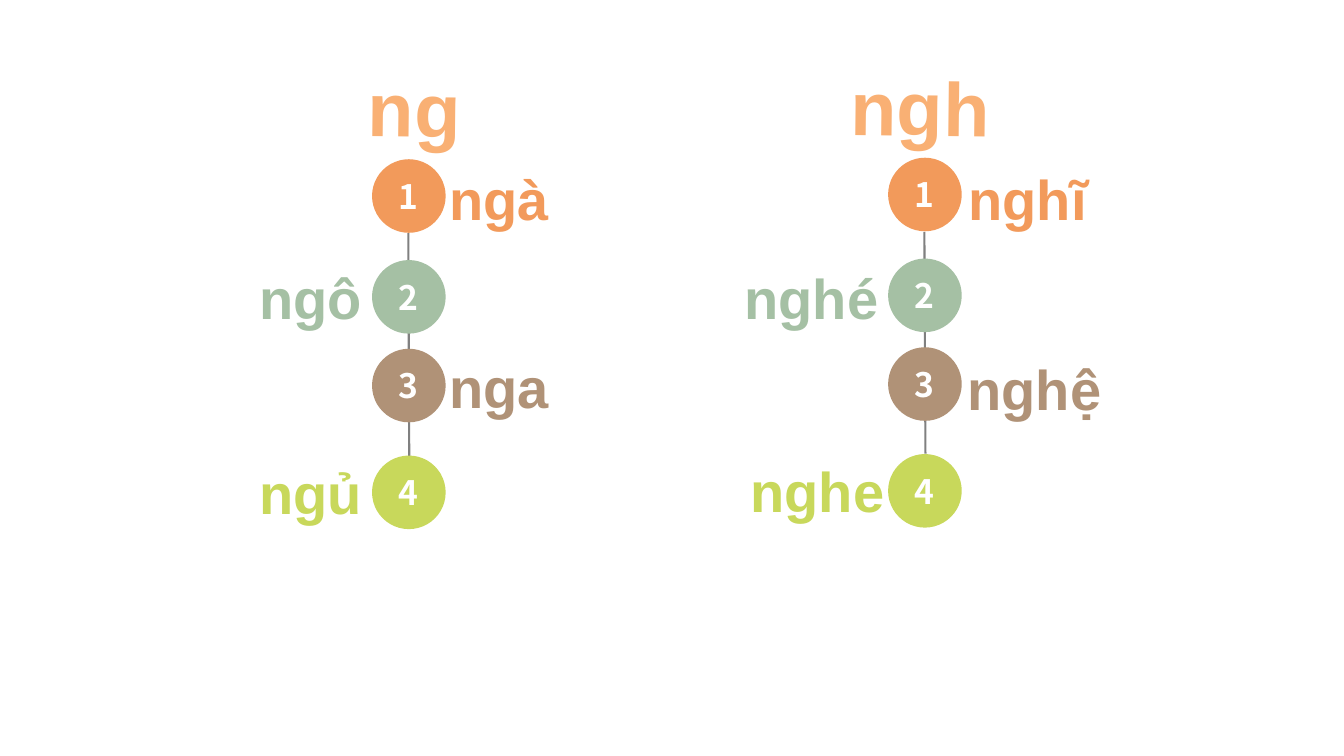
import pptx
import pptx.util
import pptx.dml.color
import pptx.enum.shapes
import pptx.enum.text
import pptx.oxml.ns
import lxml.etree

COLORS = {"title": "F9B074", "line": "808080", "white": "FFFFFF",
          "orange": "F29A5B", "sage": "A5C0A4", "brown": "B09277", "lime": "C8D85B"}
ALIGN = pptx.enum.text.PP_ALIGN
ANCHOR = pptx.enum.text.MSO_ANCHOR


def rgb(name):
    return pptx.dml.color.RGBColor.from_string(COLORS[name])


def write(tf, text, size=40, color="white", font="Arial", align=ALIGN.LEFT,
          anchor=ANCHOR.TOP, wrap=True):
    tf.word_wrap = wrap
    tf.vertical_anchor = anchor
    p = tf.paragraphs[0]
    p.alignment = align
    r = p.add_run()
    r.text = text
    r.font.size = pptx.util.Pt(size)
    r.font.bold = True
    r.font.name = font
    r.font.color.rgb = rgb(color)
    # East Asian typeface, so that every script uses the same font
    ea = lxml.etree.SubElement(r.font._element, pptx.oxml.ns.qn("a:ea"))
    ea.set("typeface", font)


class Deck:
    """Positions and sizes are percentages of the slide's width and height."""
    circle_w, circle_h, word_h, title_h = 5.48, 9.73, 10.27, 3.07

    def __init__(self):
        self.prs = pptx.Presentation()
        self.prs.slide_width = pptx.util.Inches(13.33)
        self.prs.slide_height = pptx.util.Inches(7.5)
        self.s = self.prs.slides.add_slide(self.prs.slide_layouts[6])

    def x(self, share):
        return round(self.prs.slide_width * share / 100)

    def y(self, share):
        return round(self.prs.slide_height * share / 100)

    def box(self, x, y, w, h):
        return self.x(x), self.y(y), self.x(w), self.y(h)

    def line(self, x, top, bottom):
        c = self.s.shapes.add_connector(
            pptx.enum.shapes.MSO_CONNECTOR.STRAIGHT,
            self.x(x), self.y(top), self.x(x + 0.08), self.y(bottom))
        c.line.color.rgb = rgb("line")
        c.line.width = pptx.util.Pt(1.5)
        lxml.etree.SubElement(c._element.spPr, pptx.oxml.ns.qn("a:effectLst"))

    def circle(self, number, cx, cy, color):
        w, h = self.circle_w, self.circle_h
        sp = self.s.shapes.add_shape(pptx.enum.shapes.MSO_SHAPE.OVAL,
                                     *self.box(cx - w / 2, cy - h / 2, w, h))
        sp.shadow.inherit = False
        sp.fill.solid()
        sp.fill.fore_color.rgb = rgb(color)
        sp.line.fill.background()
        write(sp.text_frame, str(number), size=24, font="Noto Sans CJK SC",
              align=ALIGN.CENTER, anchor=ANCHOR.MIDDLE)

    def word(self, text, x, y, w, color, align):
        sp = self.s.shapes.add_textbox(*self.box(x, y, w, self.word_h))
        write(sp.text_frame, text, color=color, align=align)
        sp.text_frame.auto_size = pptx.enum.text.MSO_AUTO_SIZE.SHAPE_TO_FIT_TEXT

    def title(self, text, x, y, w, align):
        sp = self.s.shapes.add_textbox(*self.box(x, y, w, self.title_h))
        sp.rotation = 0.6
        write(sp.text_frame, text, size=54, color="title", align=align, wrap=False)


# Circle rows, shared by both columns: centre and colour
ROWS = [(25.93, "orange"), (39.27, "sage"), (51, "brown"), (65.13, "lime")]

# Columns: title, axis, line ends, vertical shift, words as (text, left, top, width)
COLUMNS = [
    {"title": ("ng", 26.55, 7.47, 8.63, ALIGN.CENTER), "axis": 30.42,
     "line": (30.8, 64.27), "shift": 0,
     "words": [("ngà", 32.7, 21.07, 24.15), ("ngô", -1.87, 34.27, 29.55),
               ("nga", 32.7, 46, 21.45), ("ngủ", 6.23, 60, 21.45)]},
    {"title": ("ngh", 61.9, 7.33, 12.5, ALIGN.RIGHT), "axis": 68.82,
     "line": (30.67, 60), "shift": -0.2,
     "words": [("nghĩ", 71.33, 21.07, 18), ("nghé", 52.5, 34.27, 13.58),
               ("nghệ", 71.25, 46.27, 20.7), ("nghe", 50.03, 59.73, 16.5)]},
]


def main():
    deck = Deck()
    for col in COLUMNS:
        # Line behind the circles
        deck.line(col["axis"] - 0.04, *col["line"])
        # Numbered circles
        for number, (cy, color) in enumerate(ROWS, 1):
            deck.circle(number, col["axis"], cy + col["shift"], color)
        # Words, alternating right and left of the line
        for i, (word, (_, color)) in enumerate(zip(col["words"], ROWS)):
            deck.word(*word, color, ALIGN.RIGHT if i % 2 else ALIGN.LEFT)
        # Heading
        deck.title(*col["title"])
    deck.prs.save("out.pptx")


if __name__ == "__main__":
    main()
